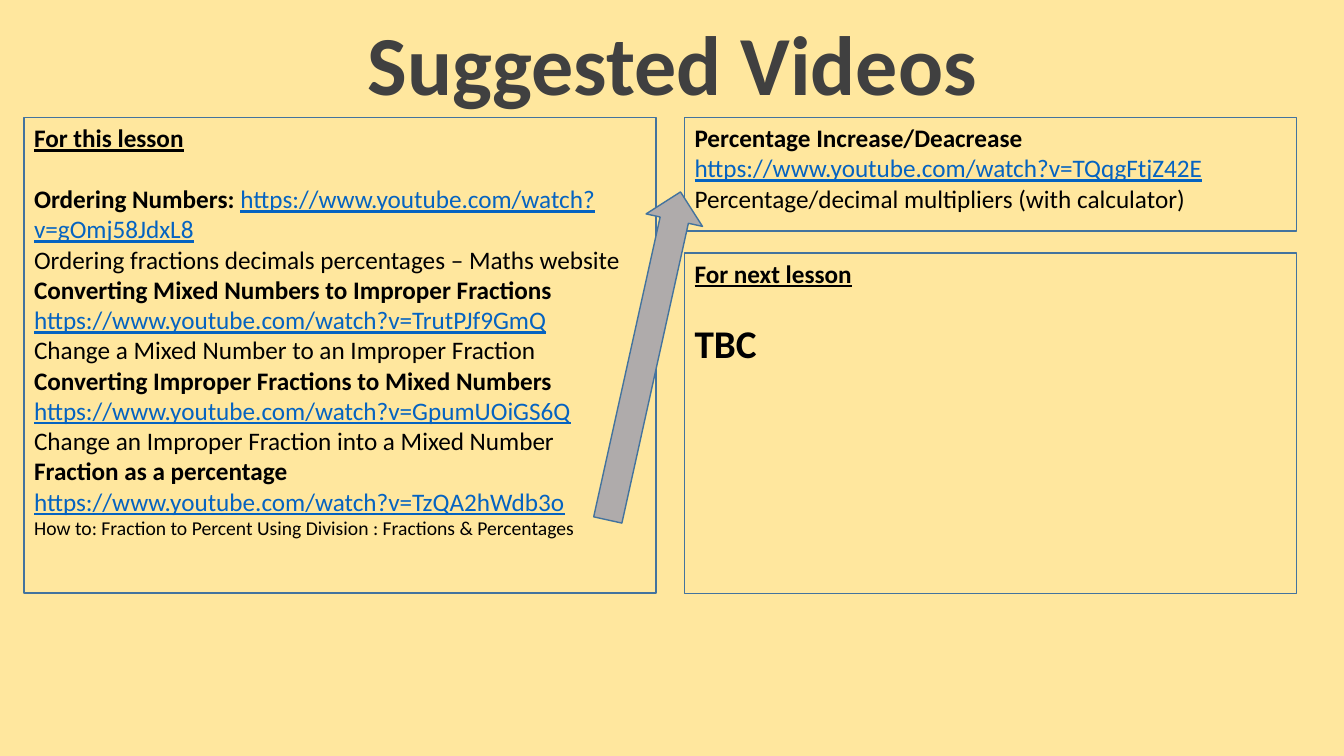
from pptx import Presentation
from pptx.dml.color import RGBColor
from pptx.enum.shapes import MSO_SHAPE
from pptx.enum.text import MSO_ANCHOR, PP_ALIGN
from pptx.util import Pt

EMU_PER_PX = 9525
FONT = "Calibri"
BACKGROUND = RGBColor(0xFF, 0xE7, 0x9E)
TITLE_GREY = RGBColor(0x40, 0x40, 0x40)
BLACK = RGBColor(0x00, 0x00, 0x00)
LINK_BLUE = RGBColor(0x05, 0x63, 0xC1)
BORDER_BLUE = RGBColor(0x43, 0x73, 0x9E)
ARROW_GREY = RGBColor(0xAF, 0xAB, 0xAB)

STYLES = {
    "heading": (18, BLACK, True, True),
    "topic": (18, BLACK, True, False),
    "link": (18, LINK_BLUE, False, True),
    "note": (18, BLACK, False, False),
    "small": (14, BLACK, False, False),
    "large": (28, BLACK, True, False),
}

VIDEO_LINK = "https://www.youtube.com/watch?v="
THIS_LESSON = [
    [("heading", "For this lesson")],
    [("topic", "Ordering Numbers: "), ("link", VIDEO_LINK + "gOmj58JdxL8")],
    [("note", "Ordering fractions decimals percentages – Maths website")],
    [("topic", "Converting Mixed Numbers to Improper Fractions")],
    [("link", VIDEO_LINK + "TrutPJf9GmQ")],
    [("note", "Change a Mixed Number to an Improper Fraction")],
    [("topic", "Converting Improper Fractions to Mixed Numbers")],
    [("link", VIDEO_LINK + "GpumUOiGS6Q")],
    [("note", "Change an Improper Fraction into a Mixed Number")],
    [("topic", "Fraction as a percentage")],
    [("link", VIDEO_LINK + "TzQA2hWdb3o")],
    [("small", "How to: Fraction to Percent Using Division : Fractions & Percentages")],
]
NEXT_LESSON = [[("heading", "For next lesson")], [("large", "TBC")]]
PERCENTAGE_CHANGE = [
    [("topic", "Percentage Increase/Deacrease")],
    [("link", VIDEO_LINK + "TQqgFtjZ42E")],
    [("note", "Percentage/decimal multipliers (with calculator)")],
]


def px(*lengths):
    """Turn pixel lengths into EMU."""
    return [length * EMU_PER_PX for length in lengths]


def set_font(font, size, color, bold, underline):
    """Apply the slide's typeface with the given look."""
    font.name = FONT
    font.size = Pt(size)
    font.color.rgb = color
    font.bold = bold
    font.underline = underline


def add_outlined(slide, preset, left, top, width, height):
    """Add an unfilled preset shape with a thin blue border."""
    shape = slide.shapes.add_shape(preset, *px(left, top, width, height))
    shape.shadow.inherit = False
    shape.fill.background()
    shape.line.color.rgb = BORDER_BLUE
    shape.line.width = Pt(1)
    return shape


def add_title(slide, text):
    """Add the centred slide title."""
    box = slide.shapes.add_textbox(*px(337, 6, 607, 107))
    box.text_frame.word_wrap = False
    paragraph = box.text_frame.paragraphs[0]
    paragraph.text = text
    paragraph.alignment = PP_ALIGN.CENTER
    set_font(paragraph.font, 60, TITLE_GREY, True, False)


def add_video_box(slide, left, top, width, height, lines):
    """Add a bordered box of styled lines, with a gap below a heading."""
    shape = add_outlined(slide, MSO_SHAPE.RECTANGLE, left, top, width, height)
    frame = shape.text_frame
    frame.word_wrap = True
    frame.vertical_anchor = MSO_ANCHOR.TOP
    for index, line in enumerate(lines):
        paragraph = frame.add_paragraph() if index else frame.paragraphs[0]
        paragraph.alignment = PP_ALIGN.LEFT
        if line[0][0] == "heading":
            paragraph.space_after = Pt(22)
        for style, text in line:
            run = paragraph.add_run()
            run.text = text
            font = run.font if len(line) > 1 else paragraph.font
            set_font(font, *STYLES[style])


def add_arrow(slide):
    """Add the tilted grey arrow between the boxes."""
    arrow = add_outlined(slide, MSO_SHAPE.DOWN_ARROW, 586, 179, 55, 320)
    arrow.rotation = 192.5
    arrow.fill.solid()
    arrow.fill.fore_color.rgb = ARROW_GREY


def main():
    """Build and save the slide."""
    presentation = Presentation()
    presentation.slide_width, presentation.slide_height = px(1280, 720)
    slide = presentation.slides.add_slide(presentation.slide_layouts[6])
    slide.background.fill.solid()
    slide.background.fill.fore_color.rgb = BACKGROUND
    add_title(slide, "Suggested Videos")
    add_video_box(slide, 23, 112, 602, 453, THIS_LESSON)
    add_video_box(slide, 652, 241, 583, 324, NEXT_LESSON)
    add_video_box(slide, 652, 112, 583, 108, PERCENTAGE_CHANGE)
    add_arrow(slide)
    presentation.save("out.pptx")


if __name__ == "__main__":
    main()
